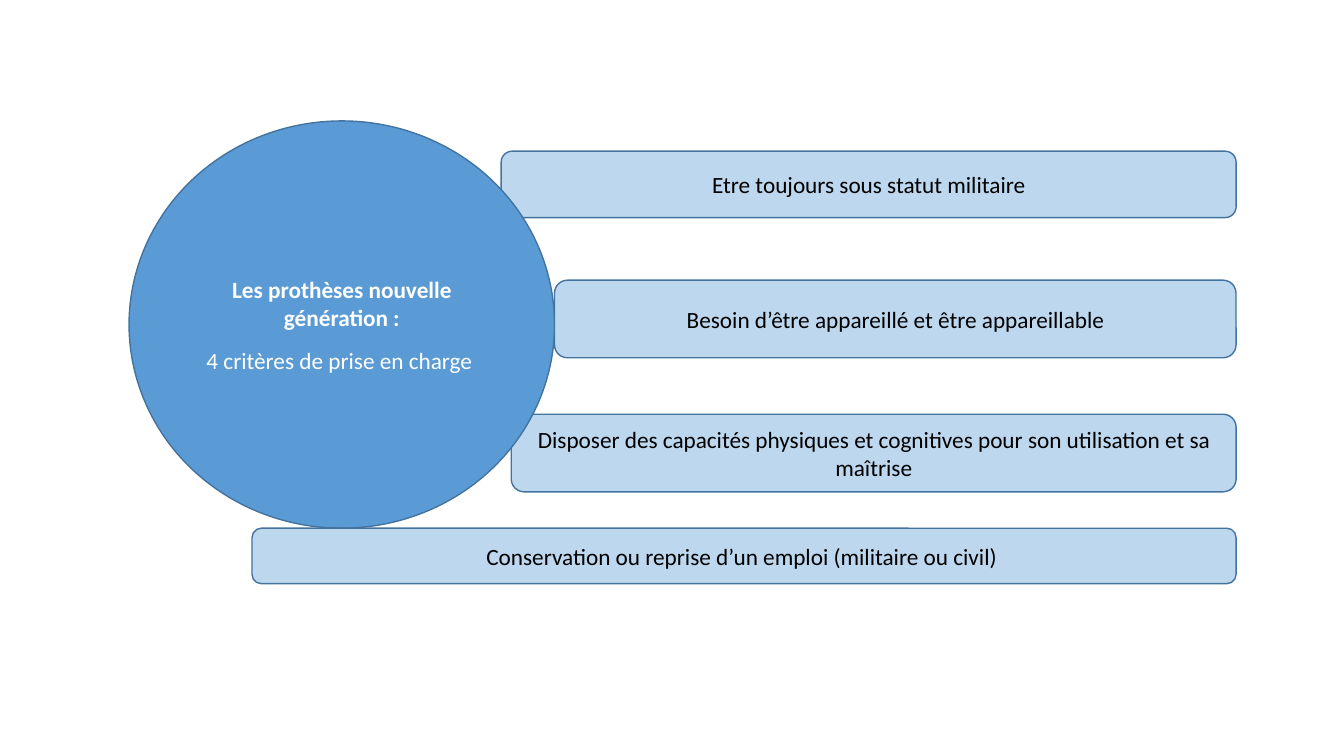
from pptx import Presentation
from pptx.dml.color import RGBColor
from pptx.enum import shapes, text
from pptx.util import Inches, Pt

PALE_BLUE = RGBColor(0xBD, 0xD7, 0xEE)
BLUE = RGBColor(0x5B, 0x9B, 0xD5)
OUTLINE = RGBColor(0x43, 0x73, 0x9E)
BLACK = RGBColor(0, 0, 0)
WHITE = RGBColor(0xFF, 0xFF, 0xFF)
RIGHT_EDGE = 12.26

prs = Presentation()
prs.slide_width = Inches(13.33)
prs.slide_height = Inches(7.5)
slide = prs.slides.add_slide(prs.slide_layouts[6])


def add_panel(kind, left, top, width, height, fill, color, wording):
    panel = slide.shapes.add_shape(
        kind, Inches(left), Inches(top), Inches(width), Inches(height))
    panel.shadow.inherit = False
    panel.fill.solid()
    panel.fill.fore_color.rgb = fill
    panel.line.color.rgb = OUTLINE
    panel.line.width = Pt(1)
    frame = panel.text_frame
    frame.word_wrap = True
    frame.vertical_anchor = text.MSO_ANCHOR.MIDDLE
    frame.text = wording
    for paragraph in frame.paragraphs:
        paragraph.alignment = text.PP_ALIGN.CENTER
        for run in paragraph.runs:
            run.font.name = "Calibri"
            run.font.size = Pt(16.6)
            run.font.color.rgb = color
    return panel


def add_criterion(left, top, height, wording):
    add_panel(shapes.MSO_SHAPE.ROUNDED_RECTANGLE, left, top, RIGHT_EDGE - left,
              height, PALE_BLUE, BLACK, wording)


criteria_behind = [
    (4.97, 1.5, 0.66, "Etre toujours sous statut militaire"),
    (5.07, 4.11, 0.77, "Disposer des capacités physiques et cognitives "
                       "pour son utilisation et sa maîtrise"),
]
criteria_in_front = [
    (5.5, 2.78, 0.77, "Besoin d’être appareillé et être appareillable"),
    (2.5, 5.24, 0.55, "Conservation ou reprise d’un emploi (militaire ou civil) "),
]

for criterion in criteria_behind:
    add_criterion(*criterion)

prostheses = add_panel(
    shapes.MSO_SHAPE.OVAL, 1.28, 1.2, 4.22, 4.04, BLUE, WHITE,
    "Les prothèses nouvelle génération :\n4 critères de prise en charge ")
heading, subheading = prostheses.text_frame.paragraphs
heading.runs[0].font.bold = True
subheading.space_before = Pt(11)

for criterion in criteria_in_front:
    add_criterion(*criterion)

prs.save("out.pptx")
